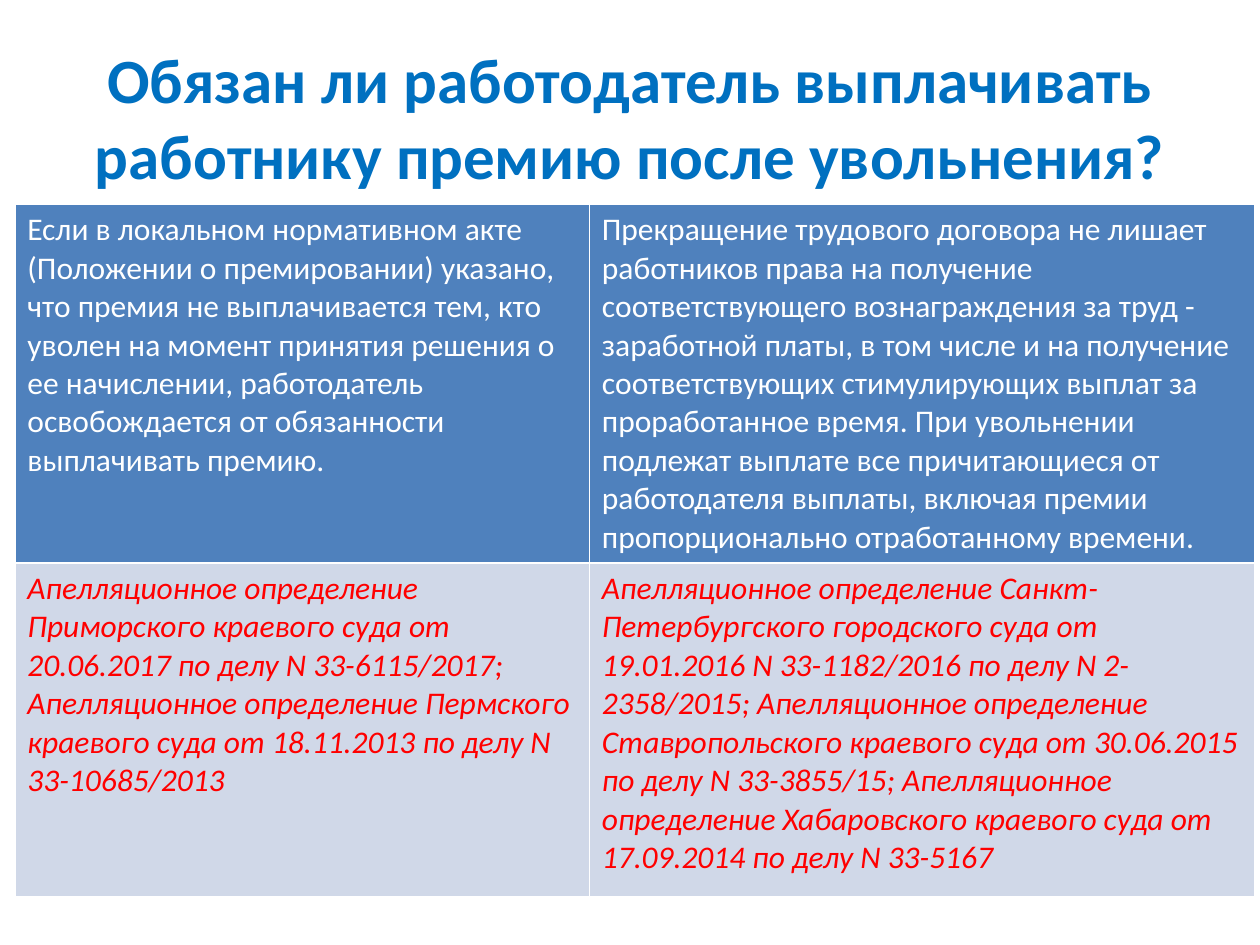
from pptx import Presentation
from pptx import util as u
from pptx.dml.color import RGBColor
from pptx.enum import text

TITLE = "Обязан ли работодатель выплачивать работнику премию после увольнения?"
POSITIONS = (
    "Если в локальном нормативном акте (Положении о премировании) указано, "
    "что премия не выплачивается тем, кто уволен на момент принятия решения о "
    "ее начислении, работодатель освобождается от обязанности выплачивать премию.",
    "Прекращение трудового договора не лишает работников права на получение "
    "соответствующего вознаграждения за труд - заработной платы, в том числе и "
    "на получение соответствующих стимулирующих выплат за проработанное время. "
    "При увольнении подлежат выплате все причитающиеся от работодателя выплаты, "
    "включая премии пропорционально отработанному времени.",
)
RULINGS = (
    "Апелляционное определение Приморского краевого суда от 20.06.2017 по делу "
    "N 33-6115/2017; Апелляционное определение Пермского краевого суда от "
    "18.11.2013 по делу N 33-10685/2013",
    "Апелляционное определение Санкт-Петербургского городского суда от "
    "19.01.2016 N 33-1182/2016 по делу N 2-2358/2015; Апелляционное определение "
    "Ставропольского краевого суда от 30.06.2015 по делу N 33-3855/15; "
    "Апелляционное определение Хабаровского краевого суда от 17.09.2014 по делу "
    "N 33-5167",
)

TITLE_FONT = {"name": "Calibri", "size": u.Pt(36), "bold": True}
POSITION_FONT = {"name": "Calibri", "size": u.Pt(18), "bold": False}
RULING_FONT = {**POSITION_FONT, "italic": True}

# wording, row height in cm, cell fill, text colour, font
ROWS = (
    (POSITIONS, 7.14, "4F81BD", "FFFFFF", POSITION_FONT),
    (RULINGS, 6.73, "D0D8E8", "FF0000", RULING_FONT),
)
COLUMN_WIDTHS = (11.58, 13.41)


def paint(color_format, hex_colour):
    color_format.rgb = RGBColor.from_string(hex_colour)


def write(frame, wording, font_values, colour, align):
    paragraph = frame.paragraphs[0]
    paragraph.alignment = align
    run = paragraph.add_run()
    run.text = wording
    for attribute, value in font_values.items():
        setattr(run.font, attribute, value)
    paint(run.font.color, colour)


def add_title(slide):
    title = slide.shapes.title
    place = {"left": 1.27, "top": 0.76, "width": 22.86, "height": 3.18}
    for side, length in place.items():
        setattr(title, side, u.Cm(length))
    frame = title.text_frame
    frame.word_wrap = True
    frame.vertical_anchor = text.MSO_ANCHOR.MIDDLE
    write(frame, TITLE, TITLE_FONT, "0070C0", text.PP_ALIGN.CENTER)


def add_court_table(slide):
    """Opposing positions on top, the rulings behind each one below."""
    height = sum(row[1] for row in ROWS)
    table = slide.shapes.add_table(
        len(ROWS), len(COLUMN_WIDTHS), u.Cm(0.3), u.Cm(4.12),
        u.Cm(sum(COLUMN_WIDTHS)), u.Cm(height)).table
    for column, width in zip(table.columns, COLUMN_WIDTHS):
        column.width = u.Cm(width)
    for row, (wordings, row_height, fill, colour, font) in zip(table.rows, ROWS):
        row.height = u.Cm(row_height)
        for cell, wording in zip(row.cells, wordings):
            cell.fill.solid()
            paint(cell.fill.fore_color, fill)
            write(cell.text_frame, wording, font, colour, text.PP_ALIGN.LEFT)


def main():
    deck = Presentation()
    deck.slide_width, deck.slide_height = u.Cm(25.4), u.Cm(19.05)
    slide = deck.slides.add_slide(deck.slide_layouts.get_by_name("Title Only"))
    add_title(slide)
    add_court_table(slide)
    deck.save("out.pptx")


if __name__ == "__main__":
    main()
